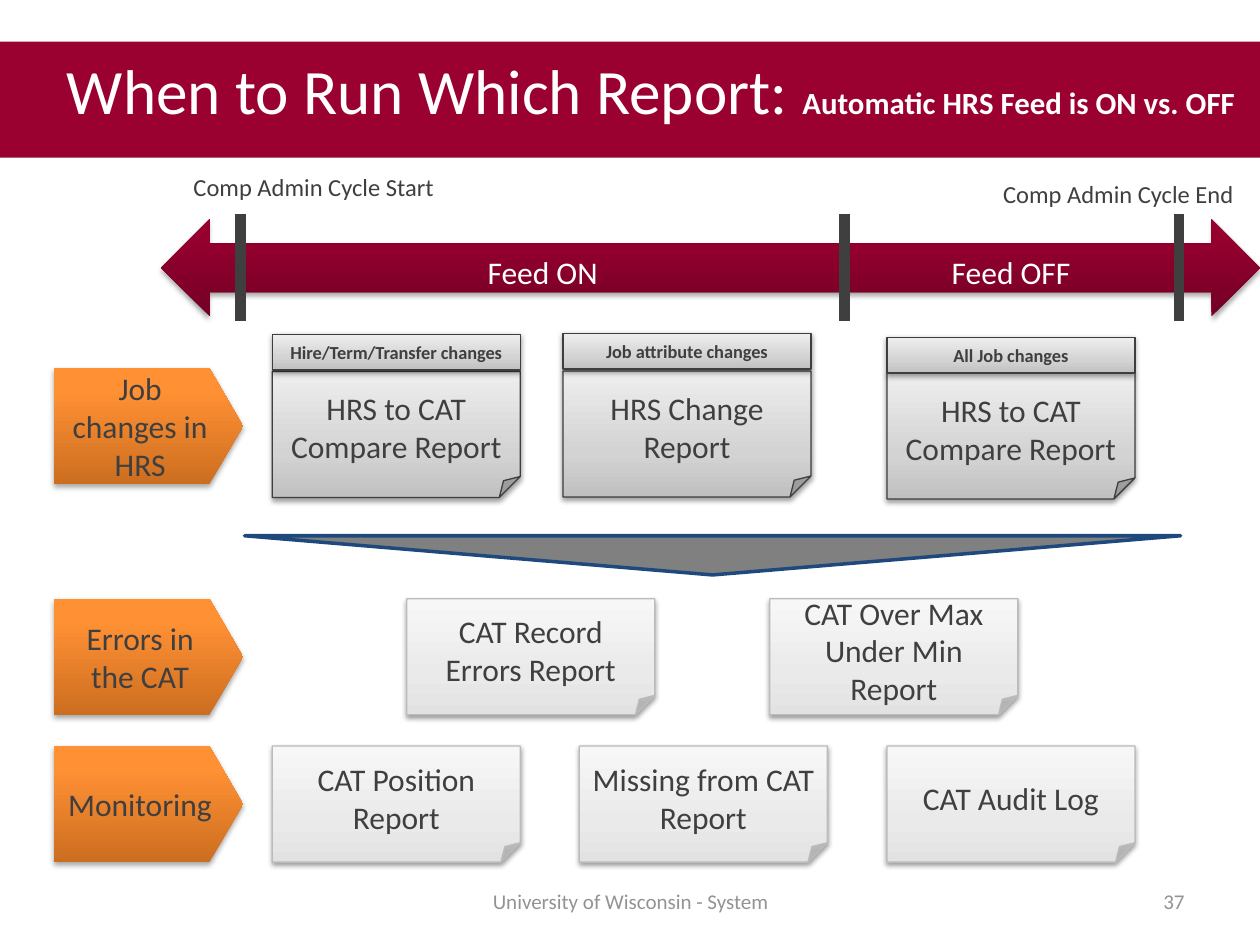
from lxml import etree
from pptx import Presentation
from pptx.dml.color import RGBColor
from pptx.enum.shapes import MSO_CONNECTOR, MSO_SHAPE
from pptx.enum.text import MSO_ANCHOR, MSO_AUTO_SIZE, PP_ALIGN
from pptx.oxml.ns import qn
from pptx.util import Cm, Pt

LEFT, CENTER, RIGHT = PP_ALIGN.LEFT, PP_ALIGN.CENTER, PP_ALIGN.RIGHT
TOP, MIDDLE = MSO_ANCHOR.TOP, MSO_ANCHOR.MIDDLE
RECT, NOTE, PLATE = MSO_SHAPE.RECTANGLE, MSO_SHAPE.FOLDED_CORNER, MSO_SHAPE.PENTAGON
ARROW, TRIANGLE = MSO_SHAPE.LEFT_RIGHT_ARROW, MSO_SHAPE.ISOSCELES_TRIANGLE
STRAIGHT = MSO_CONNECTOR.STRAIGHT

THEME = {
    "font": "Calibri",
    "white": "FFFFFF", "ink": "3F3F3F", "muted": "939393", "banner": "9A0030",
    "funnel": "808080", "funnel_line": "1F497D",
    "crimson": [(0, "730024"), (80, "95002F"), (100, "96002F")],
    "orange": [(0, "CC6E20"), (80, "FF9034"), (100, "FF9136")],
    "silver": [(0, "C0C0C0"), (35, "D3D3D3"), (100, "EEEEEE")],
    "pale": [(0, "E2E2E2"), (35, "EAEAEA"), (100, "F7F7F7")],
    "silver_line": "3E3E3E", "pale_line": "BBBBBB",
    "title": 36.1, "subtitle": 17.6, "body": 18, "label": 14, "footer": 12, "tab": 10.5,
}


def write(s, *texts, size="body", color="ink", bold=False, align=CENTER,
          anchor=MIDDLE, inset=(0.25, 0.13, 0.25, 0.13)):
    tf = s.text_frame
    tf.word_wrap = True
    tf.auto_size = MSO_AUTO_SIZE.NONE
    tf.vertical_anchor = anchor
    tf.margin_left, tf.margin_top, tf.margin_right, tf.margin_bottom = map(Cm, inset)
    p = tf.paragraphs[0]
    p.alignment = align
    for text in texts:
        r = p.add_run()
        r.text = text
        r.font.name = THEME["font"]
        r.font.size = Pt(THEME[size])
        r.font.bold = bold
        r.font.color.rgb = RGBColor.from_string(THEME[color])
    return p


def add_block(shapes, kind, x, y, w, h, stops, line=None, shadow=(35, 1.8)):
    s = shapes.add_shape(kind, Cm(x), Cm(y), Cm(w), Cm(h))
    s.fill.gradient()
    s.fill.gradient_angle = 90
    gs_list = s._element.spPr.find(qn("a:gradFill")).find(qn("a:gsLst"))
    for gs in list(gs_list):
        gs_list.remove(gs)
    for pos, color in THEME[stops]:
        gs = etree.SubElement(gs_list, qn("a:gs"), pos=str(pos * 1000))
        etree.SubElement(gs, qn("a:srgbClr"), val=color)
    if line:
        s.line.color.rgb = RGBColor.from_string(THEME[line])
        s.line.width = Pt(0.75)
    else:
        s.line.fill.background()
    s.shadow.inherit = False
    alpha, dist = shadow
    outer = etree.SubElement(s._element.spPr.find(qn("a:effectLst")), qn("a:outerShdw"),
                             blurRad=str(Pt(3.1)), dist=str(Pt(dist)),
                             dir="5400000", rotWithShape="0")
    black = etree.SubElement(outer, qn("a:srgbClr"), val="000000")
    etree.SubElement(black, qn("a:alpha"), val=str(alpha * 1000))
    return s


prs = Presentation()
prs.slide_width, prs.slide_height = Cm(25.4), Cm(19.05)
slide = prs.slides.add_slide(prs.slide_layouts[5])
shapes = slide.shapes

title = shapes.title
title.left, title.top, title.width, title.height = Cm(0), Cm(0.84), Cm(25.4), Cm(2.34)
title.fill.solid()
title.fill.fore_color.rgb = RGBColor.from_string(THEME["banner"])
p = write(title, "When to Run Which Report: ", "Automatic HRS Feed is ON vs. OFF",
          size="title", color="white", align=LEFT, anchor=TOP, inset=(1.35, 0.2, 0.25, 0.13))
p.runs[1].font.size = Pt(THEME["subtitle"])
p.runs[1].font.bold = True

add_block(shapes, ARROW, 3.25, 4.42, 22.15, 1.96, "crimson")
for x in (4.85, 17.02, 23.77):
    marker = shapes.add_connector(STRAIGHT, Cm(x), Cm(4.32), Cm(x), Cm(6.48))
    marker.line.color.rgb = RGBColor.from_string(THEME["ink"])
    marker.line.width = Pt(6)
    etree.SubElement(marker._element.spPr, qn("a:effectLst"))

for text, x, y, w, h, size, color, align, anchor in (
    ("Feed ON", 9.3, 4.98, 3.28, 1.02, "body", "white", CENTER, TOP),
    ("Feed OFF", 18.16, 4.98, 4.45, 1.02, "body", "white", CENTER, TOP),
    ("Comp Admin Cycle Start", 3.25, 3.33, 6.15, 0.86, "label", "ink", CENTER, TOP),
    ("Comp Admin Cycle End", 19.79, 3.48, 5.51, 0.86, "label", "ink", CENTER, TOP),
    ("University of Wisconsin - System", 8.69, 17.65, 8.05, 1.02, "footer", "muted", CENTER, MIDDLE),
    ("37", 18.21, 17.65, 5.92, 1.02, "footer", "muted", RIGHT, MIDDLE),
):
    box = shapes.add_textbox(Cm(x), Cm(y), Cm(w), Cm(h))
    write(box, text, size=size, color=color, align=align, anchor=anchor)

ROW_H, NOTE_W = 2.34, 5
JOBS_Y, ERRORS_Y, MONITOR_Y = 7.42, 12.07, 15.04
COL_1, COL_2, COL_3 = 5.49, 11.68, 17.88
NOTE_INSET = (0.25, 0.13, 0.25, 0)
NOTE_SHADOW = (38, 1.6)

for text, y in (("Job changes in HRS", JOBS_Y), ("Errors in the CAT", ERRORS_Y),
                ("Monitoring", MONITOR_Y)):
    plate = add_block(shapes, PLATE, 1.09, y, 3.81, ROW_H, "orange")
    plate.adjustments[0] = 0.29
    write(plate, text)

for heading, text, x, tab_y, note_y in (
    ("Hire/Term/Transfer changes", "HRS to CAT Compare Report", COL_1, 6.74, 7.49),
    ("Job attribute changes", "HRS Change Report", 11.35, 6.72, 7.48),
    ("All Job changes", "HRS to CAT Compare Report", COL_3, 6.8, 7.52),
):
    card = shapes.add_group_shape()
    note = add_block(card.shapes, NOTE, x, note_y, NOTE_W, 2.54, "silver", "silver_line", NOTE_SHADOW)
    write(note, text, inset=NOTE_INSET)
    tab = add_block(card.shapes, RECT, x, tab_y, NOTE_W, 0.72, "silver", "silver_line", NOTE_SHADOW)
    write(tab, heading, size="tab", bold=True, inset=(0, 0, 0, 0))

funnel = shapes.add_shape(TRIANGLE, Cm(4.93), Cm(10.8), Cm(18.87), Cm(0.79))
funnel.rotation = 180
funnel.fill.solid()
funnel.fill.fore_color.rgb = RGBColor.from_string(THEME["funnel"])
funnel.line.color.rgb = RGBColor.from_string(THEME["funnel_line"])
funnel.line.width = Pt(2)
funnel.shadow.inherit = False

for text, x, y in (
    ("CAT Record Errors Report", 8.2, ERRORS_Y),
    ("CAT Over Max Under Min Report", 15.52, ERRORS_Y),
    ("CAT Position Report", COL_1, MONITOR_Y),
    ("Missing from CAT Report", COL_2, MONITOR_Y),
    ("CAT Audit Log", COL_3, MONITOR_Y),
):
    note = add_block(shapes, NOTE, x, y, NOTE_W, ROW_H, "pale", "pale_line", NOTE_SHADOW)
    write(note, text, inset=NOTE_INSET)

prs.save("out.pptx")
